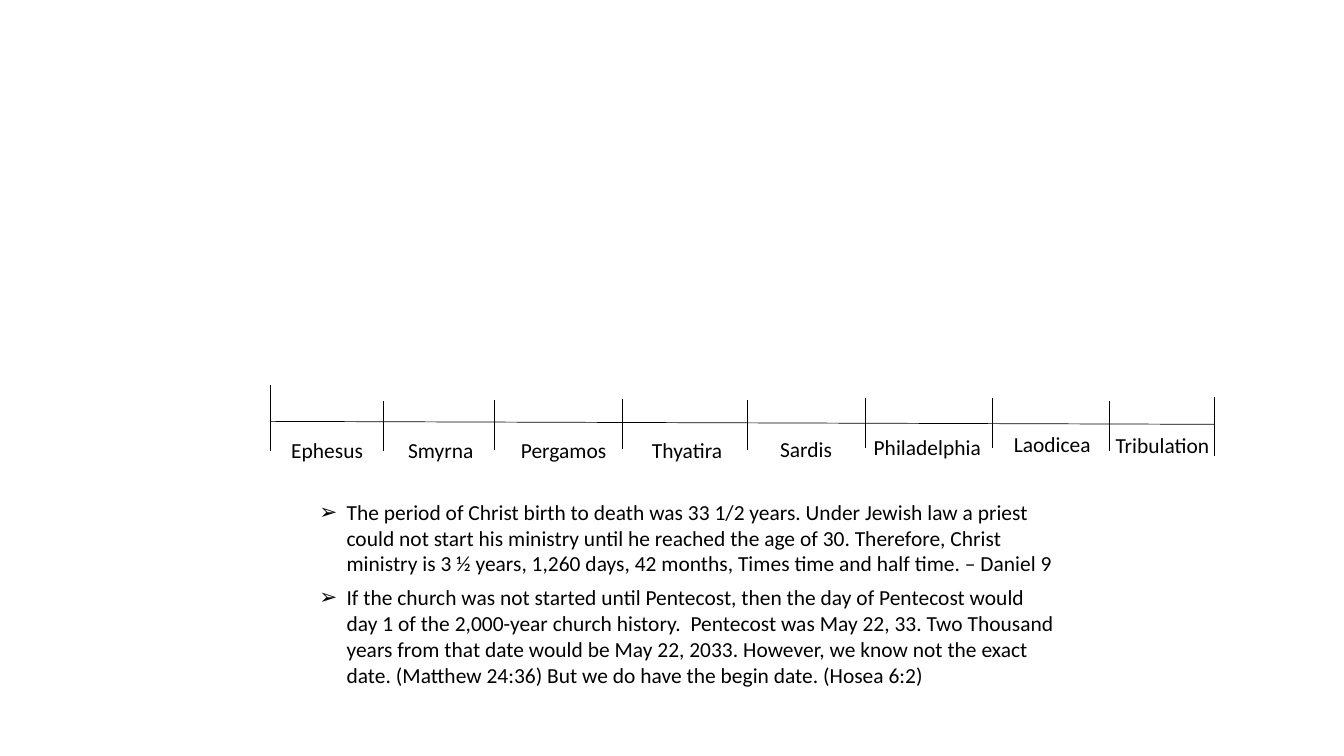
"""Build a church-age timeline slide with a bulleted list below it."""
import pptx
import pptx.dml.color
import pptx.enum.shapes
import pptx.enum.text
import pptx.oxml.ns
import pptx.util
from lxml import etree

Pt = pptx.util.Pt

COLORS = {"ink": "000000", "paper": "FFFFFF"}
FONT = "Calibri"
TEXT_SIZE = 15.3
LINE_WIDTH = 0.5
LABEL_HEIGHT = 25.9
INNER_TICK_HEIGHT = 35.3

AXIS_START, AXIS_END = (193, 301), (867.6, 303.1)
END_TICKS = [(193, 275, 321.8), (867.6, 283.7, 325.4)]
INNER_TICKS = [
    (273.6, 286.6), (352.8, 285.8), (444.2, 285.1), (533.5, 285.8),
    (617.8, 284.4), (708.5, 284.4), (792.7, 286.6),
]
CHURCH_AGES = [
    ("Ephesus", 200.9, 308.9, 66.2),
    ("Smyrna", 284.4, 308.9, 61.9),
    ("Pergamos", 365, 308.9, 76.3),
    ("Thyatira", 458.6, 308.9, 65.5),
    ("Sardis", 550.1, 308.2, 51.8),
    ("Philadelphia", 617, 306.7, 91.4),
    ("Laodicea", 717.1, 304.6, 69.8),
    ("Tribulation", 789.8, 305.3, 82.1),
]
NOTES_BOX = (221, 352.8, 539.3, 143.3)
NOTES = [
    "The period of Christ birth to death was 33 1/2 years. Under Jewish law a priest "
    "could not start his ministry until he reached the age of 30. Therefore, Christ "
    "ministry is 3 ½ years, 1,260 days, 42 months, Times time and half time. – Daniel 9",
    "If the church was not started until Pentecost, then the day of Pentecost would "
    "day 1 of the 2,000-year church history.  Pentecost was May 22, 33. Two Thousand "
    "years from that date would be May 22, 2033. However, we know not the exact date. "
    "(Matthew 24:36) But we do have the begin date. (Hosea 6:2)",
]
BULLET = "➢"
BULLET_INDENT = 19.4


def color(name):
    return pptx.dml.color.RGBColor.from_string(COLORS[name])


def add_line(slide, start, end):
    line = slide.shapes.add_connector(
        pptx.enum.shapes.MSO_CONNECTOR.STRAIGHT, *map(Pt, start + end))
    line.line.color.rgb = color("ink")
    line.line.width = Pt(LINE_WIDTH)
    properties = line._element.spPr
    etree.SubElement(properties, pptx.oxml.ns.qn("a:effectLst"))


def write(para, text):
    para.text = text
    para.alignment = pptx.enum.text.PP_ALIGN.LEFT
    para.space_before = Pt(0)
    para.space_after = Pt(6)
    for span in para.runs:
        span.font.name = FONT
        span.font.size = Pt(TEXT_SIZE)
        span.font.color.rgb = color("ink")


def add_label(slide, text, left, top, width):
    box = slide.shapes.add_textbox(*map(Pt, (left, top, width, LABEL_HEIGHT)))
    box.text_frame.word_wrap = False
    box.text_frame.auto_size = pptx.enum.text.MSO_AUTO_SIZE.SHAPE_TO_FIT_TEXT
    write(box.text_frame.paragraphs[0], text)


def add_bullet(para):
    properties = para._p.get_or_add_pPr()
    properties.set("marL", str(Pt(BULLET_INDENT)))
    properties.set("indent", str(-Pt(BULLET_INDENT)))
    etree.SubElement(properties, pptx.oxml.ns.qn("a:buChar"), char=BULLET)


def fill_notes(body):
    body.left, body.top, body.width, body.height = map(Pt, NOTES_BOX)
    frame = body.text_frame
    frame.word_wrap = True
    frame.auto_size = pptx.enum.text.MSO_AUTO_SIZE.SHAPE_TO_FIT_TEXT
    frame.vertical_anchor = pptx.enum.text.MSO_ANCHOR.TOP
    for index, note in enumerate(NOTES):
        para = frame.add_paragraph() if index else frame.paragraphs[0]
        write(para, note)
        add_bullet(para)


def main():
    deck = pptx.Presentation()
    deck.slide_width, deck.slide_height = Pt(960), Pt(540)
    page = deck.slides.add_slide(deck.slide_layouts[1])
    page.background.fill.solid()
    page.background.fill.fore_color.rgb = color("paper")
    title = page.shapes.title._element
    title.getparent().remove(title)

    add_line(page, AXIS_START, AXIS_END)
    inner = [(x, top, top + INNER_TICK_HEIGHT) for x, top in INNER_TICKS]
    for x, top, bottom in END_TICKS + inner:
        add_line(page, (x, top), (x, bottom))
    for age in CHURCH_AGES:
        add_label(page, *age)
    fill_notes(page.placeholders[1])

    deck.save("out.pptx")


if __name__ == "__main__":
    main()
